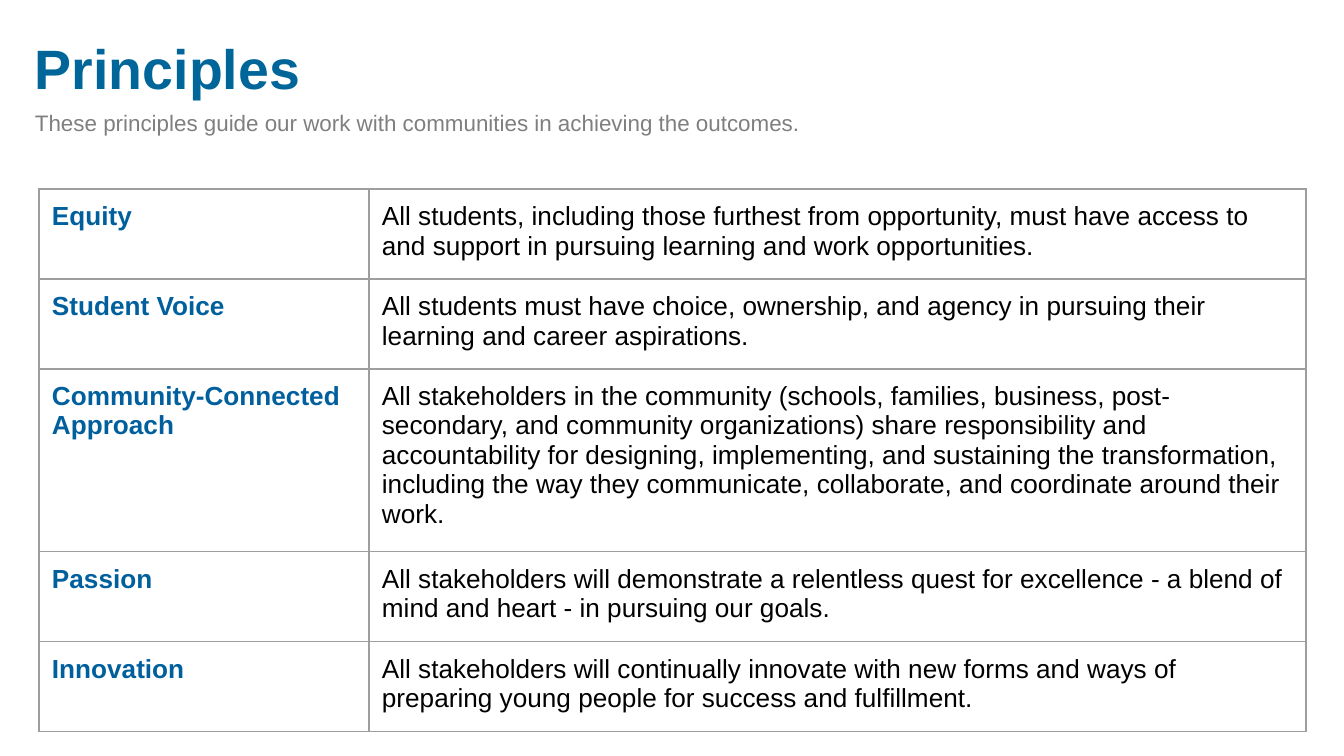
"""Build the Principles slide: a heading, a subtitle and a bordered two-column table."""
from dataclasses import dataclass

from lxml.etree import SubElement
from pptx import Presentation
from pptx.dml.color import RGBColor as RGB
from pptx.enum.text import MSO_ANCHOR as Anchor
from pptx.oxml.ns import qn
from pptx.util import Pt

TITLE = "Principles"
SUBTITLE = "These principles guide our work with communities in achieving the outcomes."
PRINCIPLES = [
    ("Equity",
     "All students, including those furthest from opportunity, must have access to "
     "and support in pursuing learning and work opportunities."),
    ("Student Voice",
     "All students must have choice, ownership, and agency in pursuing their "
     "learning and career aspirations."),
    ("Community-Connected Approach",
     "All stakeholders in the community (schools, families, business, post-secondary, "
     "and community organizations) share responsibility and accountability for designing, "
     "implementing, and sustaining the transformation, including the way they communicate, "
     "collaborate, and coordinate around their work."),
    ("Passion",
     "All stakeholders will demonstrate a relentless quest for excellence - a blend of "
     "mind and heart - in pursuing our goals."),
    ("Innovation",
     "All stakeholders will continually innovate with new forms and ways of "
     "preparing young people for success and fulfillment."),
]

SLIDE = (1344, 756)
TITLE_BOX = (35, 42, 1230, 60)
SUBTITLE_BOX = (35, 94, 1210, 60)
TABLE_AT = (39, 189)
COLUMNS = (330, 937)
ROWS = (90, 90, 173, 90, 90)
INSET = 13


@dataclass(frozen=True)
class Theme:
    font: str = "Arial"
    title: str = "006699"
    subtitle: str = "7F7F7F"
    name: str = "005F9D"
    body: str = "000000"
    border: str = "9E9E9E"
    title_size: float = 29.7
    subtitle_size: float = 12
    table_size: float = 14
    border_width: float = 0.75


THEME = Theme()


def px(n):
    return round(n * 914400 / 134.4)


def set_margins(target, margin):
    target.margin_left = target.margin_right = px(margin)
    target.margin_top = target.margin_bottom = px(margin)


def write(tf, text, size, color, bold=False):
    p = tf.paragraphs[0]
    p.text = text
    font = p.font
    font.name, font.size, font.bold = THEME.font, Pt(size), bold
    font.color.rgb = RGB.from_string(color)
    return p


def add_heading(slide, box, text, size, color, bold=False):
    tf = slide.shapes.add_textbox(*map(px, box)).text_frame
    tf.word_wrap = True
    tf.vertical_anchor = Anchor.MIDDLE
    set_margins(tf, 0)
    write(tf, text, size, color, bold).line_spacing = 0.9


def add_borders(cell):
    tc_pr = cell._tc.get_or_add_tcPr()
    for side in ("a:lnL", "a:lnR", "a:lnT", "a:lnB"):
        ln = SubElement(tc_pr, qn(side), w=str(Pt(THEME.border_width)))
        fill = SubElement(ln, qn("a:solidFill"))
        SubElement(fill, qn("a:srgbClr"), val=THEME.border)


def add_principles(slide):
    size = (sum(COLUMNS), sum(ROWS))
    frame = slide.shapes.add_table(len(ROWS), len(COLUMNS), *map(px, TABLE_AT + size))
    table = frame.table
    table.first_row = table.horz_banding = False
    for column, width in zip(table.columns, COLUMNS):
        column.width = px(width)
    for row, height, texts in zip(table.rows, ROWS, PRINCIPLES):
        row.height = px(height)
        styles = ((THEME.name, True), (THEME.body, False))
        for cell, text, (color, bold) in zip(row.cells, texts, styles):
            set_margins(cell, INSET)
            add_borders(cell)
            cell.fill.background()
            write(cell.text_frame, text, THEME.table_size, color, bold)


def main():
    prs = Presentation()
    prs.slide_width, prs.slide_height = map(px, SLIDE)
    slide = prs.slides.add_slide(prs.slide_layouts[6])
    add_heading(slide, TITLE_BOX, TITLE, THEME.title_size, THEME.title, bold=True)
    add_heading(slide, SUBTITLE_BOX, SUBTITLE, THEME.subtitle_size, THEME.subtitle)
    add_principles(slide)
    prs.save("out.pptx")


if __name__ == "__main__":
    main()
